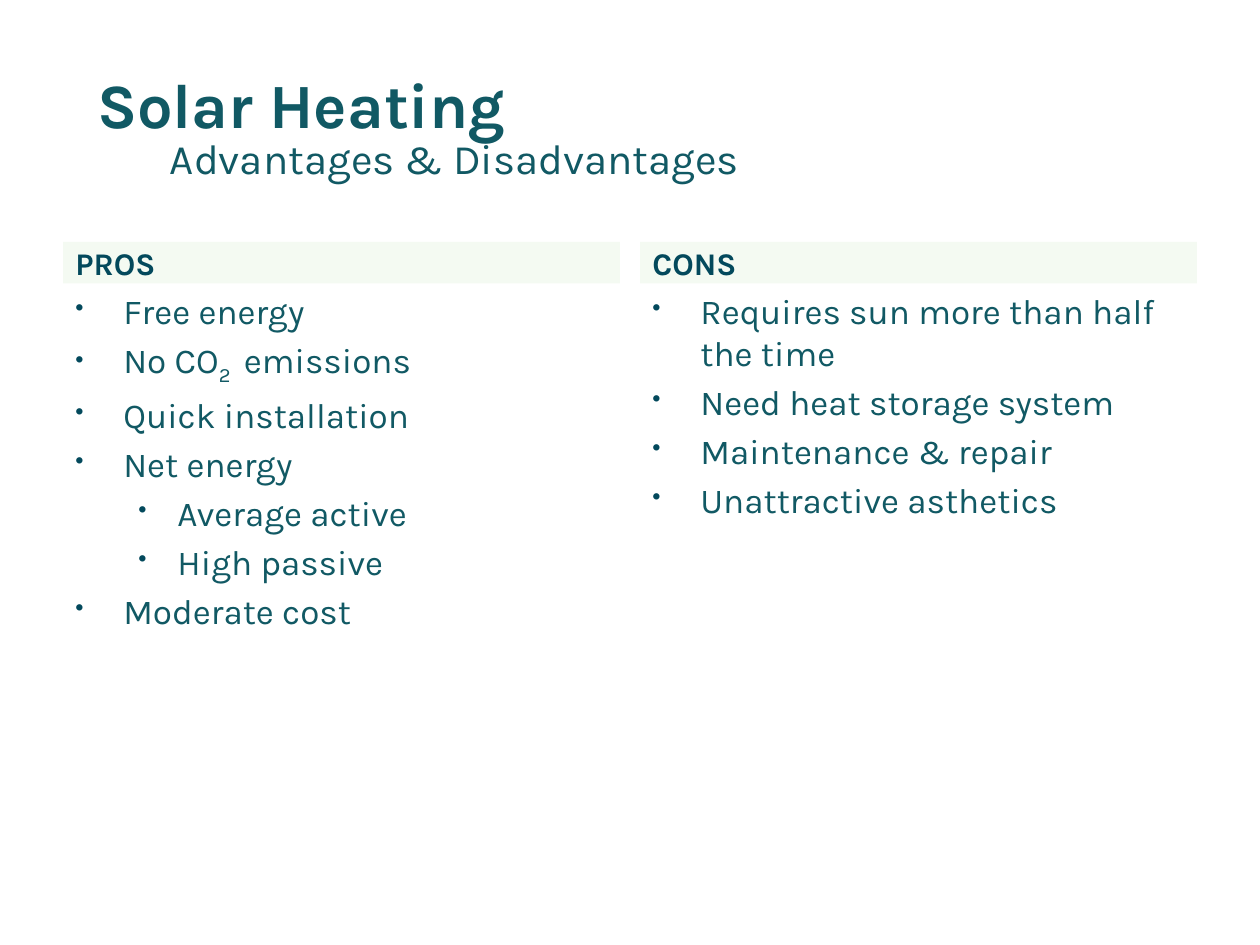
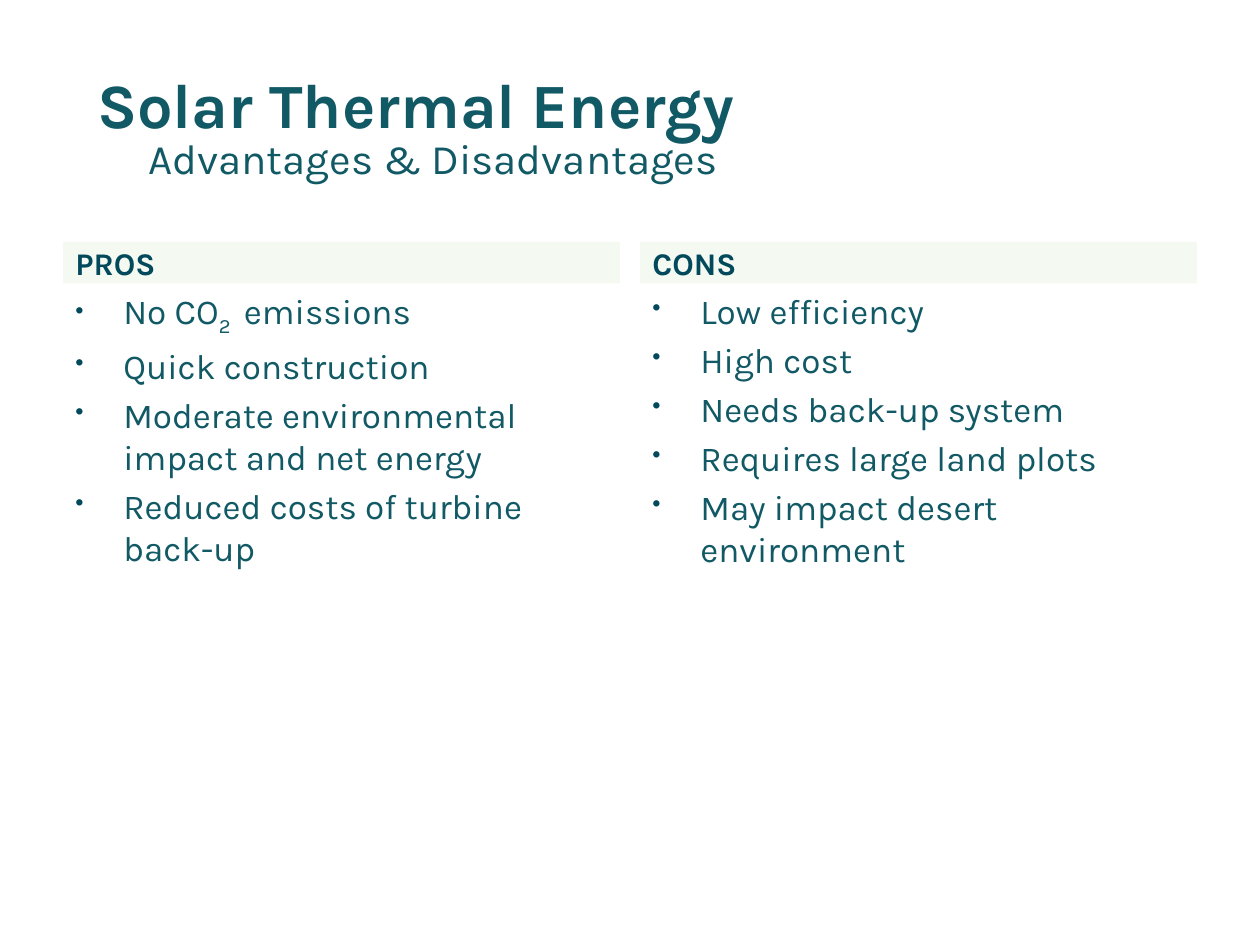
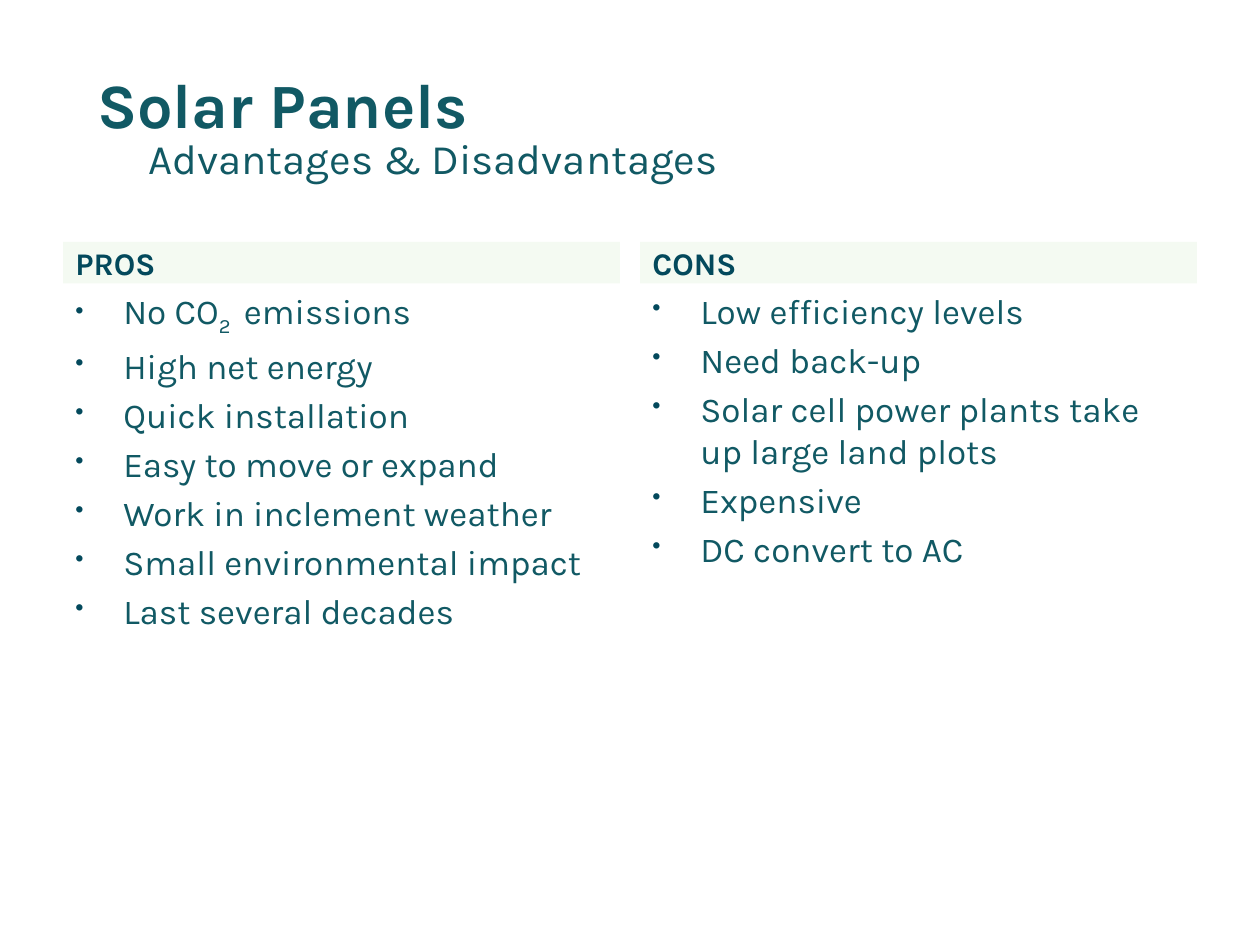
from lxml import etree
from pptx import Presentation
from pptx.dml.color import RGBColor
from pptx.enum.shapes import MSO_SHAPE
from pptx.enum.text import MSO_ANCHOR, MSO_AUTO_SIZE, PP_ALIGN
from pptx.oxml.ns import qn
from pptx.util import Inches, Pt

RECTANGLE = MSO_SHAPE.RECTANGLE
TOP, MIDDLE, BOTTOM = MSO_ANCHOR.TOP, MSO_ANCHOR.MIDDLE, MSO_ANCHOR.BOTTOM
LEFT = PP_ALIGN.LEFT
NO_AUTOFIT = MSO_AUTO_SIZE.NONE
TITLE_ONLY = 5

COLUMN_LEFTS = (0.5, 5.08)
COLUMN_WIDTH = 4.42
HEADING_TOP, HEADING_HEIGHT = 1.92, 0.33
LIST_TOP, LIST_HEIGHT = HEADING_TOP + HEADING_HEIGHT, 4.45
INDENTS = ((0.38, -0.38), (0.81, -0.31))

CO2_POINT = (("No CO", False), ("2 ", True), (" emissions", False))

TOPICS = [
    ("Solar Heating", 1.25,
     ["Free energy", CO2_POINT, "Quick installation", "Net energy",
      ("Average active", 1), ("High passive", 1), "Moderate cost"],
     ["Requires sun more than half the time", "Need heat storage system",
      "Maintenance & repair", "Unattractive asthetics"]),
    ("Solar Thermal Energy", 1.08,
     [CO2_POINT, "Quick construction",
      "Moderate environmental impact and net energy",
      "Reduced costs of turbine back-up"],
     ["Low efficiency", "High cost", "Needs back-up system",
      "Requires large land plots", "May impact desert environment"]),
    ("Solar Panels", 1.08,
     [CO2_POINT, "High net energy", "Quick installation",
      "Easy to move or expand", "Work in inclement weather",
      "Small environmental impact", "Last several decades"],
     ["Low efficiency levels", "Need back-up",
      "Solar cell power plants take up large land plots", "Expensive",
      "DC convert to AC"]),
]


def color(hex_value):
    return RGBColor.from_string(hex_value)


class Deck:
    font = "Karla"
    text = "115964"
    accent = "03495C"
    band = "E5F4E0"
    band_opacity = 39

    def __init__(self):
        self.presentation = Presentation()
        self.presentation.slide_width = Inches(10)
        self.presentation.slide_height = Inches(7.5)
        self.slide = None

    def new_slide(self):
        layout = self.presentation.slide_layouts[TITLE_ONLY]
        self.slide = self.presentation.slides.add_slide(layout)

    def frame(self, shape, anchor=TOP):
        frame = shape.text_frame
        frame.word_wrap = True
        frame.auto_size = NO_AUTOFIT
        frame.vertical_anchor = anchor
        frame.paragraphs[0].alignment = LEFT
        return frame

    def run(self, paragraph, words, size, hex_value, bold=False, subscript=False):
        run = paragraph.add_run()
        run.text = words
        run.font.name = self.font
        run.font.size = Pt(size)
        run.font.bold = bold
        run.font.color.rgb = color(hex_value)
        if subscript:
            run.font._element.set("baseline", "-25000")

    def title(self, words):
        title = self.slide.shapes.title
        title.left, title.top = Inches(0.67), Inches(0.47)
        title.width, title.height = Inches(9), Inches(0.7)
        paragraph = self.frame(title, MIDDLE).paragraphs[0]
        self.run(paragraph, words, 36, self.text, bold=True)

    def text_box(self, left, top, width, height):
        box = self.slide.shapes.add_textbox(
            Inches(left), Inches(top), Inches(width), Inches(height))
        return self.frame(box)

    def subtitle(self, words, left):
        paragraph = self.text_box(left, 1, 8.92, 0.5).paragraphs[0]
        self.run(paragraph, words, 24, self.text)

    def heading(self, words, left):
        band = self.slide.shapes.add_shape(
            RECTANGLE, Inches(left), Inches(HEADING_TOP),
            Inches(COLUMN_WIDTH), Inches(HEADING_HEIGHT))
        band.shadow.inherit = False
        band.line.fill.background()
        band.fill.solid()
        band.fill.fore_color.rgb = color(self.band)
        band_color = band._element.spPr.find(".//" + qn("a:srgbClr"))
        etree.SubElement(band_color, qn("a:alpha"), val=str(self.band_opacity * 1000))
        frame = self.frame(band, BOTTOM)
        frame.margin_top, frame.margin_bottom = 0, Inches(0.01)
        self.run(frame.paragraphs[0], words, 18, self.accent, bold=True)

    def bullet(self, paragraph, level):
        margin, indent = INDENTS[level]
        paragraph.level = level
        properties = paragraph._p.get_or_add_pPr()
        properties.set("marL", str(Inches(margin)))
        properties.set("indent", str(Inches(indent)))
        bullet_color = etree.SubElement(properties, qn("a:buClr"))
        etree.SubElement(bullet_color, qn("a:srgbClr"), val=self.accent)
        etree.SubElement(properties, qn("a:buSzPct"), val="70000")
        etree.SubElement(properties, qn("a:buChar"), char="•")

    def bullet_list(self, points, left):
        frame = self.text_box(left, LIST_TOP, COLUMN_WIDTH, LIST_HEIGHT)
        for index, point in enumerate(points):
            level = 0
            if isinstance(point, str):
                pieces = ((point, False),)
            elif point is CO2_POINT:
                pieces = point
            else:
                words, level = point
                pieces = ((words, False),)
            paragraph = frame.add_paragraph() if index else frame.paragraphs[0]
            self.bullet(paragraph, level)
            if index:
                paragraph.space_before = Pt(4)
            for words, subscript in pieces:
                self.run(paragraph, words, 20, self.text, subscript=subscript)


def main():
    deck = Deck()
    for topic, subtitle_left, pros, cons in TOPICS:
        deck.new_slide()
        deck.title(topic)
        deck.subtitle("Advantages & Disadvantages", subtitle_left)
        for left, heading, points in zip(COLUMN_LEFTS, ("PROS", "CONS"), (pros, cons)):
            deck.heading(heading, left)
            deck.bullet_list(points, left)
    deck.presentation.save("out.pptx")


if __name__ == "__main__":
    main()
